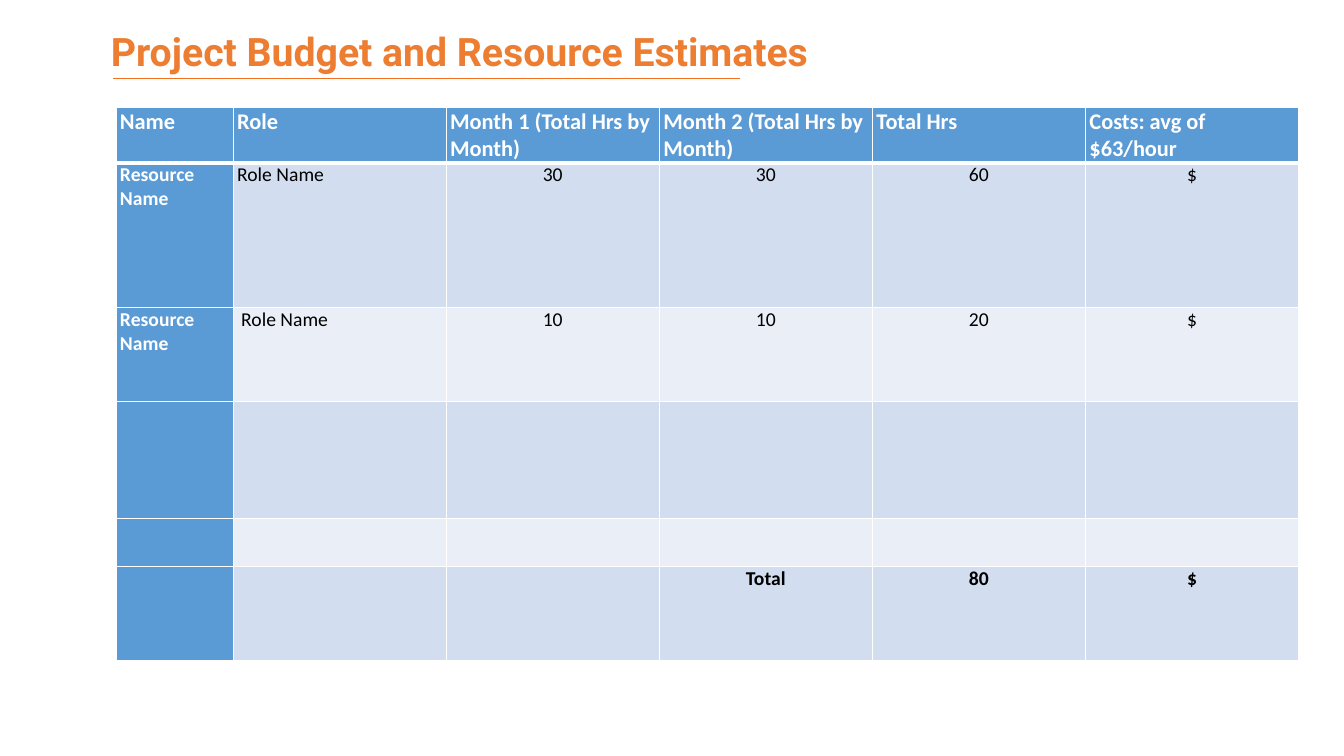
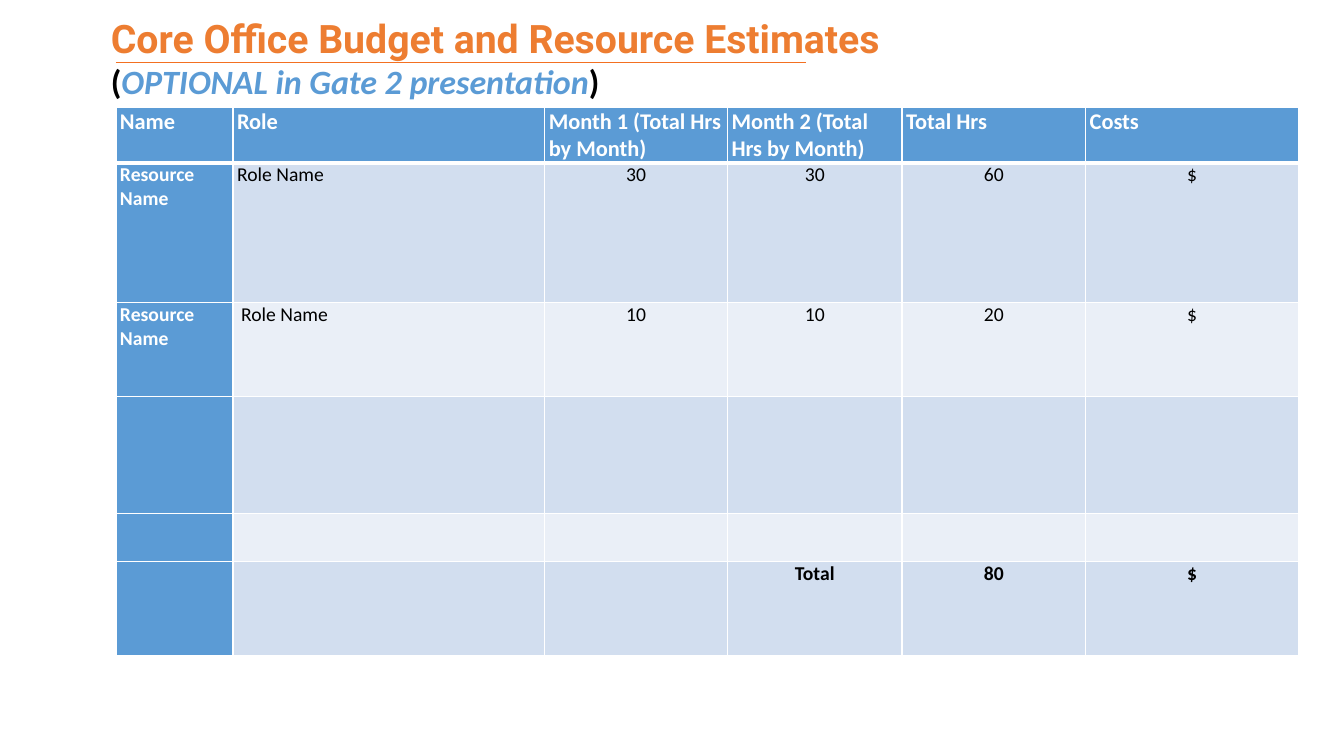
from dataclasses import dataclass
from typing import Any, NamedTuple

import lxml.etree
import pptx
import pptx.dml.color
import pptx.enum.shapes
import pptx.enum.text
import pptx.oxml.ns
import pptx.util

ALIGN = pptx.enum.text.PP_ALIGN
ANCHOR = pptx.enum.text.MSO_ANCHOR


@dataclass(frozen=True)
class Theme:
    orange: str = "ED7D31"
    rule: str = "F37021"
    blue: str = "5B9BD5"
    dark: str = "D2DEEF"
    light: str = "EAEFF7"
    white: str = "FFFFFF"
    black: str = "000000"
    head_font: str = "Roboto"
    body_font: str = "Calibri"
    title_size: float = 28
    gap_size: float = 39.6
    note_size: float = 24.3
    head_size: float = 16
    cell_size: float = 14
    thin: float = 1
    thick: float = 3


class Box(NamedTuple):
    """Edges and extents as percentages of the slide."""
    left: float
    top: float
    width: float
    height: float = 0


class Span(NamedTuple):
    text: str
    size: float
    ink: str
    font: str
    slant: bool = False


class Page(NamedTuple):
    title: list[Span]
    note: list[Span]
    rule: Box
    cost: str
    cols: list[float]
    rows: list[float]


THEME = Theme()
WIDE, HIGH = pptx.util.Inches(13.33), pptx.util.Inches(7.5)
TITLE = Box(7.5, 3.2, 86.25, 7.87)
TABLE = Box(8.63, 14.27, 88)
HEADS = ["Name", "Role", "Month 1 (Total Hrs by Month)",
         "Month 2 (Total Hrs by Month)", "Total Hrs"]
BODY = [
    ["Resource Name", "Role Name", "30", "30", "60", "$"],
    ["Resource Name", "Role Name", "10", "10", "20", "$"],
    [""] * 6,
    [""] * 6,
    ["", "", "", "Total", "80", "$"],
]


def head(text: str) -> Span:
    return Span(text, THEME.title_size, THEME.orange, THEME.head_font)


def note(text: str, ink: str = THEME.black, slant: bool = False) -> Span:
    return Span(text, THEME.note_size, ink, THEME.body_font, slant)


# cols are relative weights; rows are percentages of the slide height.
PAGES = [
    Page([head("Project Budget and Resource Estimates")], [],
         Box(8.4, 10.4, 46.66), "Costs: avg of $63/hour",
         [1.16, 2.11, 2.11, 2.11, 2.11, 2.11],
         [7.07, 19.2, 12.4, 15.47, 6.4, 12.4]),
    Page([head("Core Office Budget and Resource Estimates"),
          Span(" ", THEME.gap_size, THEME.black, THEME.body_font)],
         [note("("),
          note("OPTIONAL in Gate 2 presentation", THEME.blue, True),
          note(")")],
         Box(8.63, 8.27, 51.31), "Costs",
         [1.16, 3.09, 1.81, 1.73, 1.82, 2.11],
         [7.07, 18.53, 12.4, 15.47, 6.4, 12.4]),
]


def color(code: str) -> pptx.dml.color.RGBColor:
    return pptx.dml.color.RGBColor.from_string(code)


def apply(item: Any, form: dict[str, Any]) -> None:
    for name, value in form.items():
        setattr(item, name, value)


def place(box: Box) -> dict[str, int]:
    return {"left": round(WIDE * box.left / 100),
            "top": round(HIGH * box.top / 100),
            "width": round(WIDE * box.width / 100),
            "height": round(HIGH * box.height / 100)}


def ink_font(font: Any, ink: str, form: dict[str, Any]) -> None:
    apply(font, form)
    font.color.rgb = color(ink)


def add_spans(para: Any, spans: list[Span]) -> None:
    for span in spans:
        run = para.add_run()
        run.text = span.text
        ink_font(run.font, span.ink, {
            "name": span.font, "size": pptx.util.Pt(span.size),
            "bold": True, "italic": span.slant})


def draw_title(slide: Any, page: Page) -> None:
    title = slide.shapes.title
    apply(title, place(TITLE))
    apply(title.text_frame, {
        "auto_size": pptx.enum.text.MSO_AUTO_SIZE.NONE,
        "word_wrap": True, "vertical_anchor": ANCHOR.MIDDLE})
    para = title.text_frame.paragraphs[0]
    apply(para, {"alignment": ALIGN.LEFT, "line_spacing": 0.9})
    add_spans(para, page.title)
    if page.note:
        para.add_line_break()
        add_spans(para, page.note)


def draw_rule(slide: Any, box: Box) -> None:
    spot = place(box)
    rule = slide.shapes.add_connector(
        pptx.enum.shapes.MSO_CONNECTOR.STRAIGHT, spot["left"], spot["top"],
        spot["left"] + spot["width"], spot["top"])
    rule.line.color.rgb = color(THEME.rule)
    rule.line.width = pptx.util.Pt(THEME.thin)
    lxml.etree.SubElement(rule._element.spPr,
                          pptx.oxml.ns.qn("a:effectLst"))


def edge_cell(cell: Any, base: float) -> None:
    """Give a cell white borders; base is the bottom width in points."""
    props = cell._tc.get_or_add_tcPr()
    qn = pptx.oxml.ns.qn
    for side in "LRTB":
        width = base if side == "B" else THEME.thin
        line = lxml.etree.SubElement(props, qn(f"a:ln{side}"),
                                     w=str(pptx.util.Pt(width)))
        fill = lxml.etree.SubElement(line, qn("a:solidFill"))
        lxml.etree.SubElement(fill, qn("a:srgbClr"), val=THEME.white)


def draw_cell(cell: Any, row: int, col: int, text: str) -> None:
    top, side, last = row == 0, col == 0, row == len(BODY)
    edge_cell(cell, THEME.thick if top else THEME.thin)
    band = THEME.dark if row % 2 else THEME.light
    cell.fill.solid()
    cell.fill.fore_color.rgb = color(THEME.blue if top or side else band)
    inset = pptx.util.Inches(0.08 if row == 2 and col else 0.04)
    apply(cell, {"margin_left": inset, "margin_right": inset,
                 "margin_top": 0, "margin_bottom": 0,
                 "vertical_anchor": ANCHOR.TOP})
    para = cell.text_frame.paragraphs[0]
    para.alignment = ALIGN.LEFT if top or col < 2 else ALIGN.CENTER
    para.text = text
    size = THEME.head_size if top else THEME.cell_size
    ink_font(para.font, THEME.white if top or side else THEME.black, {
        "name": THEME.body_font, "size": pptx.util.Pt(size),
        "bold": top or side or last})


def draw_table(slide: Any, page: Page) -> None:
    data = [HEADS + [page.cost], *BODY]
    spot = place(TABLE._replace(height=sum(page.rows)))
    table = slide.shapes.add_table(len(data), len(data[0]), **spot).table
    for col, share in zip(table.columns, page.cols):
        col.width = round(spot["width"] * share / sum(page.cols))
    for row, share in zip(table.rows, page.rows):
        row.height = round(HIGH * share / 100)
    for row, line in enumerate(data):
        for col, text in enumerate(line):
            draw_cell(table.cell(row, col), row, col, text)


def main() -> None:
    deck = pptx.Presentation()
    apply(deck, {"slide_width": WIDE, "slide_height": HIGH})
    for page in PAGES:
        slide = deck.slides.add_slide(deck.slide_layouts[5])
        draw_title(slide, page)
        draw_table(slide, page)
        draw_rule(slide, page.rule)
    deck.save("out.pptx")


if __name__ == "__main__":
    main()
